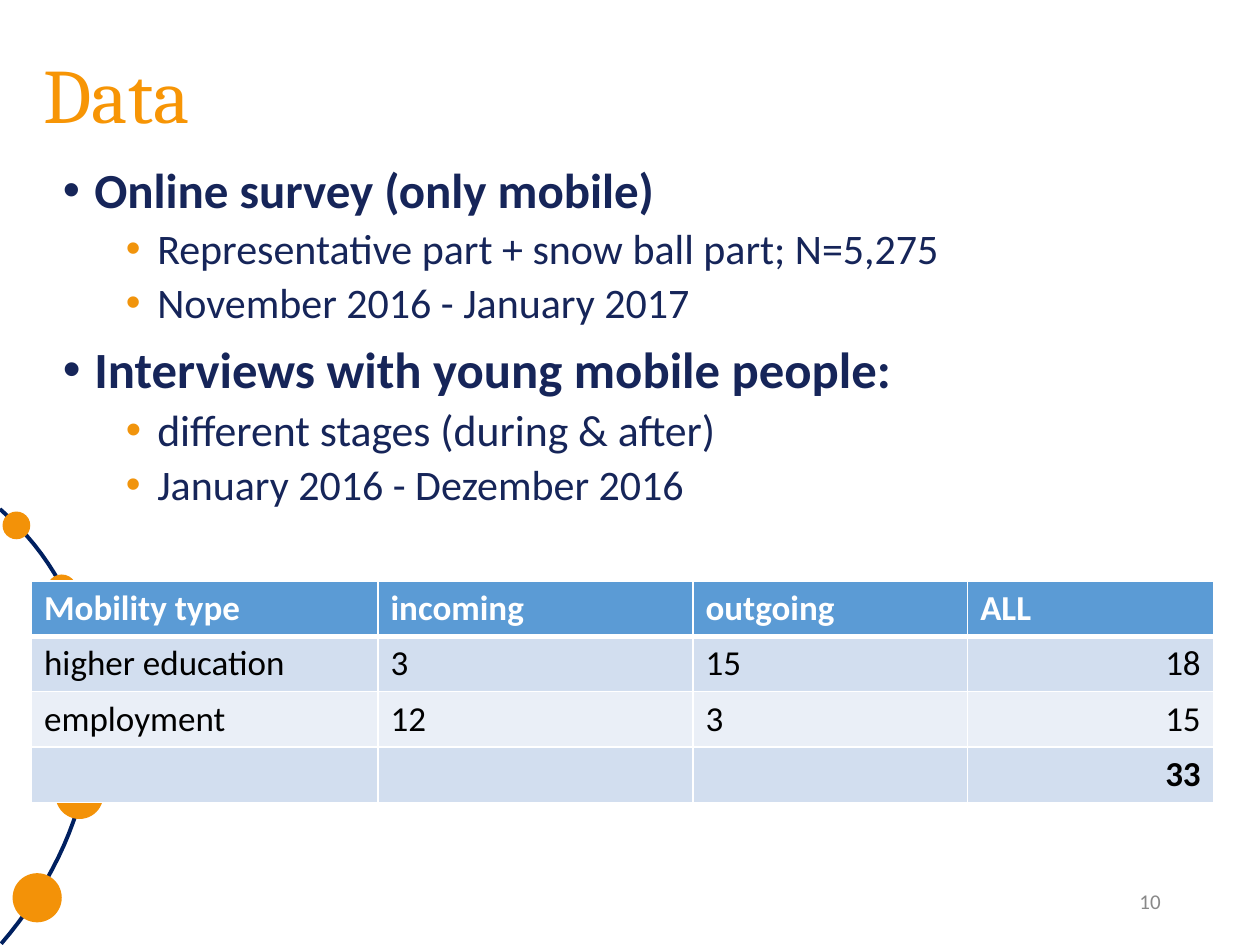
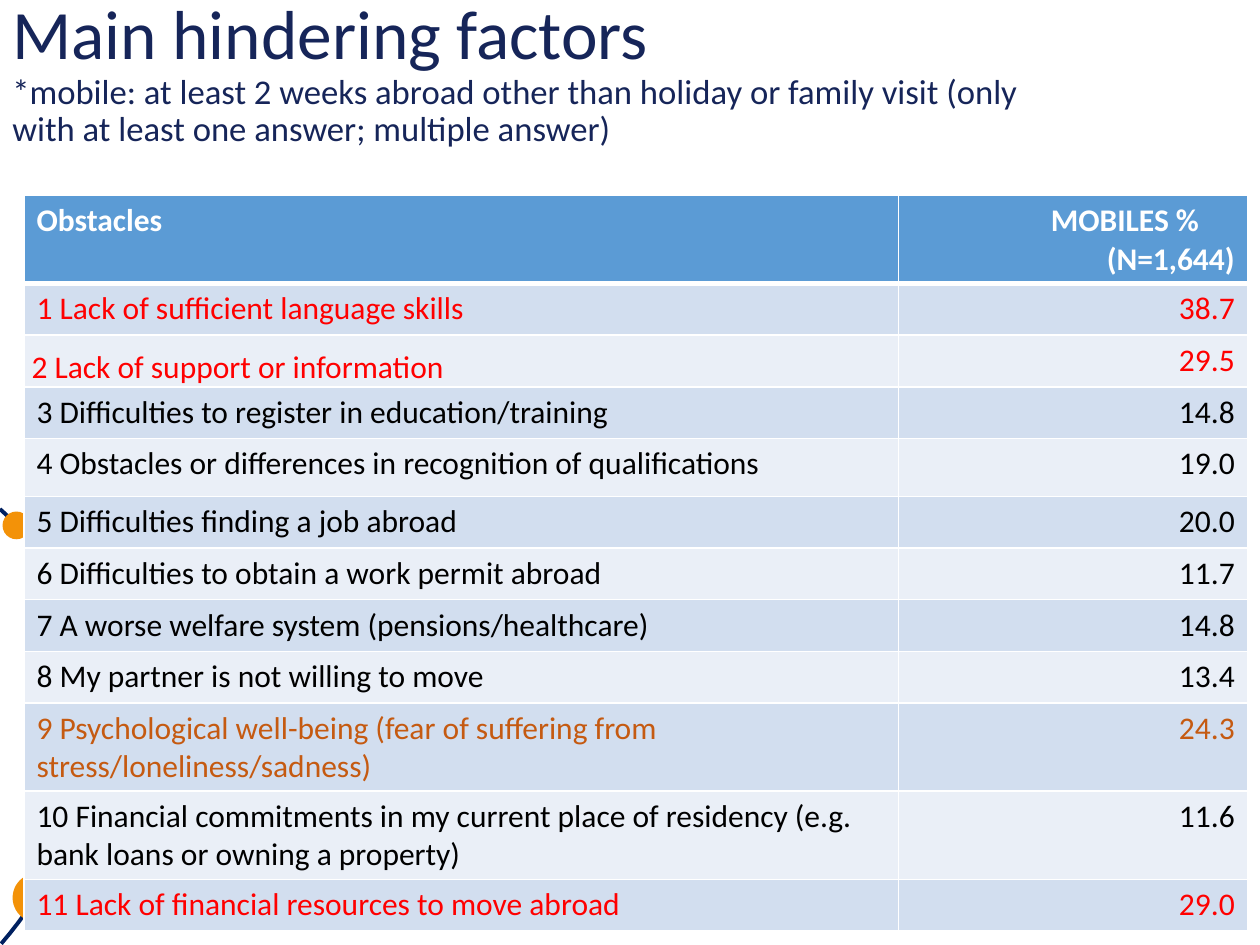
import lxml.etree
import pptx
import pptx.dml.color
import pptx.enum.shapes
import pptx.enum.text
import pptx.oxml.ns
import pptx.util

Inches = pptx.util.Inches
Pt = pptx.util.Pt
RGBColor = pptx.dml.color.RGBColor
Align = pptx.enum.text.PP_ALIGN
Anchor = pptx.enum.text.MSO_ANCHOR
qn = pptx.oxml.ns.qn

WHITE = RGBColor(0xFF, 0xFF, 0xFF)
BLACK = RGBColor(0, 0, 0)
NAVY = RGBColor(0x16, 0x25, 0x59)
ARC = RGBColor(0x00, 0x20, 0x60)
ORANGE = RGBColor(0xF3, 0x92, 0x08)
TITLE = RGBColor(0xF7, 0x95, 0x05)
BULLET = RGBColor(0xF1, 0x94, 0x0C)
GREY = RGBColor(0x89, 0x89, 0x89)
HEAD = RGBColor(0x5B, 0x9B, 0xD5)
BANDS = (RGBColor(0xEA, 0xEF, 0xF7), RGBColor(0xD2, 0xDE, 0xEF))
RED = RGBColor(0xFF, 0, 0)
RUST = RGBColor(0xC5, 0x5A, 0x11)

CURVE = ((0, 4.04), (1.01, 4.92), (0.95, 6.4), (0.01, 7.49))
DOTS = ((0.02, 4.06, 0.22), (0.37, 4.56, 0.24), (0.53, 5.25, 0.35),
        (0.44, 6.12, 0.38), (0.1, 6.93, 0.39))
POINTS = (
    (0, "Online survey (only mobile)", 28),
    (1, "Representative part + snow ball part; N=5,275", 24),
    (1, "November 2016 - January 2017", 24),
    (0, "Interviews with young mobile people:", 29),
    (1, "different stages (during & after)", 25),
    (1, "January 2016 - Dezember 2016", 24),
)
TYPES = (
    ("Mobility type", "incoming", "outgoing", "ALL"),
    ("higher education", "3", "15", "18"),
    ("employment", "12", "3", "15"),
    ("", "", "", "33"),
)
FACTORS = (
    ("1 Lack of sufficient language skills", "38.7", RED),
    ("2 Lack of support or information", "29.5", RED),
    ("3 Difficulties to register in education/training", "14.8", BLACK),
    ("4 Obstacles or differences in recognition of qualifications", "19.0", BLACK),
    ("5 Difficulties finding a job abroad", "20.0", BLACK),
    ("6 Difficulties to obtain a work permit abroad", "11.7", BLACK),
    ("7 A worse welfare system (pensions/healthcare)", "14.8", BLACK),
    ("8 My partner is not willing to move", "13.4", BLACK),
    ("9 Psychological well-being (fear of suffering from "
     "stress/loneliness/sadness)", "24.3", RUST),
    ("10 Financial commitments in my current place of residency "
     "(e.g. bank loans or owning a property)", "11.6", BLACK),
    ("11 Lack of financial resources to move abroad", "29.0", RED),
)


class Deck:
    """Holds the shared style and the current slide."""

    def __init__(self):
        self.prs = pptx.Presentation()
        self.prs.slide_width = Inches(10)
        self.prs.slide_height = Inches(7.5)

    def start(self):
        self.shapes = self.prs.slides.add_slide(self.prs.slide_layouts[6]).shapes
        self.arc()
        for left, top, size in DOTS:
            self.dot(left, top, size)

    def arc(self, steps=40):
        marks = []
        for step in range(steps + 1):
            t = step / steps
            parts = ((1 - t) ** 3, 3 * t * (1 - t) ** 2, 3 * t * t * (1 - t), t ** 3)
            marks.append(tuple(Inches(sum(w * p[axis] for w, p in zip(parts, CURVE)))
                               for axis in (0, 1)))
        pen = self.shapes.build_freeform(*marks[0])
        pen.add_line_segments(marks[1:], close=False)
        line = pen.convert_to_shape()
        line.shadow.inherit = False
        line.fill.background()
        line.line.color.rgb = ARC
        line.line.width = Pt(2.25)

    def dot(self, left, top, size):
        oval = pptx.enum.shapes.MSO_SHAPE.OVAL
        disc = self.shapes.add_shape(oval, *map(Inches, (left, top, size, size)))
        disc.shadow.inherit = False
        disc.fill.solid()
        disc.fill.fore_color.rgb = ORANGE
        disc.line.fill.background()

    def run(self, para, text, size, color, bold=False, font="Calibri"):
        run = para.add_run()
        run.text = text
        run.font.name = font
        run.font.size = Pt(size)
        run.font.bold = bold
        run.font.color.rgb = color

    def box(self, left, top, width, height, anchor=Anchor.MIDDLE):
        frame = self.shapes.add_textbox(
            *map(Inches, (left, top, width, height))).text_frame
        frame.word_wrap = True
        frame.vertical_anchor = anchor
        return frame

    def title(self, place, lines, color, font="Calibri"):
        frame = self.box(*place)
        for i, (text, size) in enumerate(lines):
            para = frame.add_paragraph() if i else frame.paragraphs[0]
            para.line_spacing = 0.9
            self.run(para, text, size, color, font=font)

    def list(self, place, items):
        frame = self.box(*place, anchor=Anchor.TOP)
        for i, (level, text, size) in enumerate(items):
            para = frame.add_paragraph() if i else frame.paragraphs[0]
            self.bullet(para, level)
            para.line_spacing = 0.9
            if i:
                para.space_before = Pt(5 if level else 10)
            self.run(para, text, size, NAVY, bold=not level)

    def bullet(self, para, level):
        para.level = level
        props = para._p.get_or_add_pPr()
        props.set("marL", str(Inches(0.25 + 0.5 * level)))
        props.set("indent", str(Inches(-0.25)))
        tint = lxml.etree.SubElement(props, qn("a:buClr"))
        lxml.etree.SubElement(tint, qn("a:srgbClr"), val=str(BULLET if level else NAVY))
        lxml.etree.SubElement(props, qn("a:buFont"), typeface="Arial")
        lxml.etree.SubElement(props, qn("a:buChar"), char="•")

    def number(self, text):
        para = self.box(7.06, 6.95, 2.25, 0.4).paragraphs[0]
        para.alignment = Align.RIGHT
        self.run(para, text, 12, GREY)

    def table(self, left, top, cols, rows):
        size = map(Inches, (left, top, sum(cols), sum(rows)))
        grid = self.shapes.add_table(len(rows), len(cols), *size).table
        for col, width in zip(grid.columns, cols):
            col.width = Inches(width)
        for i, (row, height) in enumerate(zip(grid.rows, rows)):
            row.height = Inches(height)
            for cell in row.cells:
                self.frame(cell, i)
                cell.fill.solid()
                cell.fill.fore_color.rgb = BANDS[i % 2] if i else HEAD
        return grid

    def frame(self, cell, row):
        props = cell._tc.get_or_add_tcPr()
        thick = {"lnT": row == 1, "lnB": row == 0}
        for side in ("lnL", "lnR", "lnT", "lnB"):
            width = Pt(3 if thick.get(side) else 1)
            line = lxml.etree.SubElement(props, qn("a:" + side), w=str(width))
            fill = lxml.etree.SubElement(line, qn("a:solidFill"))
            lxml.etree.SubElement(fill, qn("a:srgbClr"), val=str(WHITE))

    def label(self, cell, text, size, color, bold=False, right=False):
        para = cell.text_frame.paragraphs[0]
        if right:
            para.alignment = Align.RIGHT
        if text:
            self.run(para, text, size, color, bold)


def data(deck):
    deck.start()
    deck.title((0.25, 0.16, 9.5, 1.25), [("Data", 44)], TITLE, "Cambria")
    deck.list((0.4, 1.27, 9.35, 5.8), POINTS)
    deck.number("10")
    grid = deck.table(0.25, 4.61, (2.75, 2.5, 2.18, 1.95), [0.44] * len(TYPES))
    for r, row in enumerate(TYPES):
        for c, text in enumerate(row):
            deck.label(grid.cell(r, c), text, 20, BLACK if r else WHITE,
                       bold=r in (0, 3), right=r > 0 and c == 3)


def factors(deck):
    deck.start()
    high = {0: 0.7, 4: 0.46, 9: 0.7, 10: 0.7}
    rows = [high.get(r, 0.41) for r in range(len(FACTORS) + 1)]
    grid = deck.table(0.19, 1.55, (6.94, 2.77), rows)
    deck.label(grid.cell(0, 0), "Obstacles", 18, WHITE, bold=True)
    share = grid.cell(0, 1)
    deck.label(share, "MOBILES %", 18, WHITE, bold=True)
    share.text_frame.paragraphs[0]._p.get_or_add_pPr().set("marL", str(Inches(1.11)))
    base = share.text_frame.add_paragraph()
    base.alignment = Align.RIGHT
    deck.run(base, "(N=1,644)", 18, WHITE, bold=True)
    for r, (name, value, color) in enumerate(FACTORS, 1):
        deck.label(grid.cell(r, 0), name, 18, color)
        deck.label(grid.cell(r, 1), value, 18, color, right=True)
    low = grid.cell(2, 0)
    low.vertical_anchor = Anchor.BOTTOM
    low.margin_left = Inches(0.06)
    low.margin_right = low.margin_top = Inches(0.01)
    low.margin_bottom = 0
    deck.title((0, 0, 8.3, 1.18), [
        ("Main hindering factors", 39.6),
        ("*mobile: at least 2 weeks abroad other than holiday or family visit "
         "(only with at least one answer; multiple answer)", 19.8)], NAVY)


def main():
    deck = Deck()
    data(deck)
    factors(deck)
    deck.prs.save("out.pptx")


if __name__ == "__main__":
    main()
